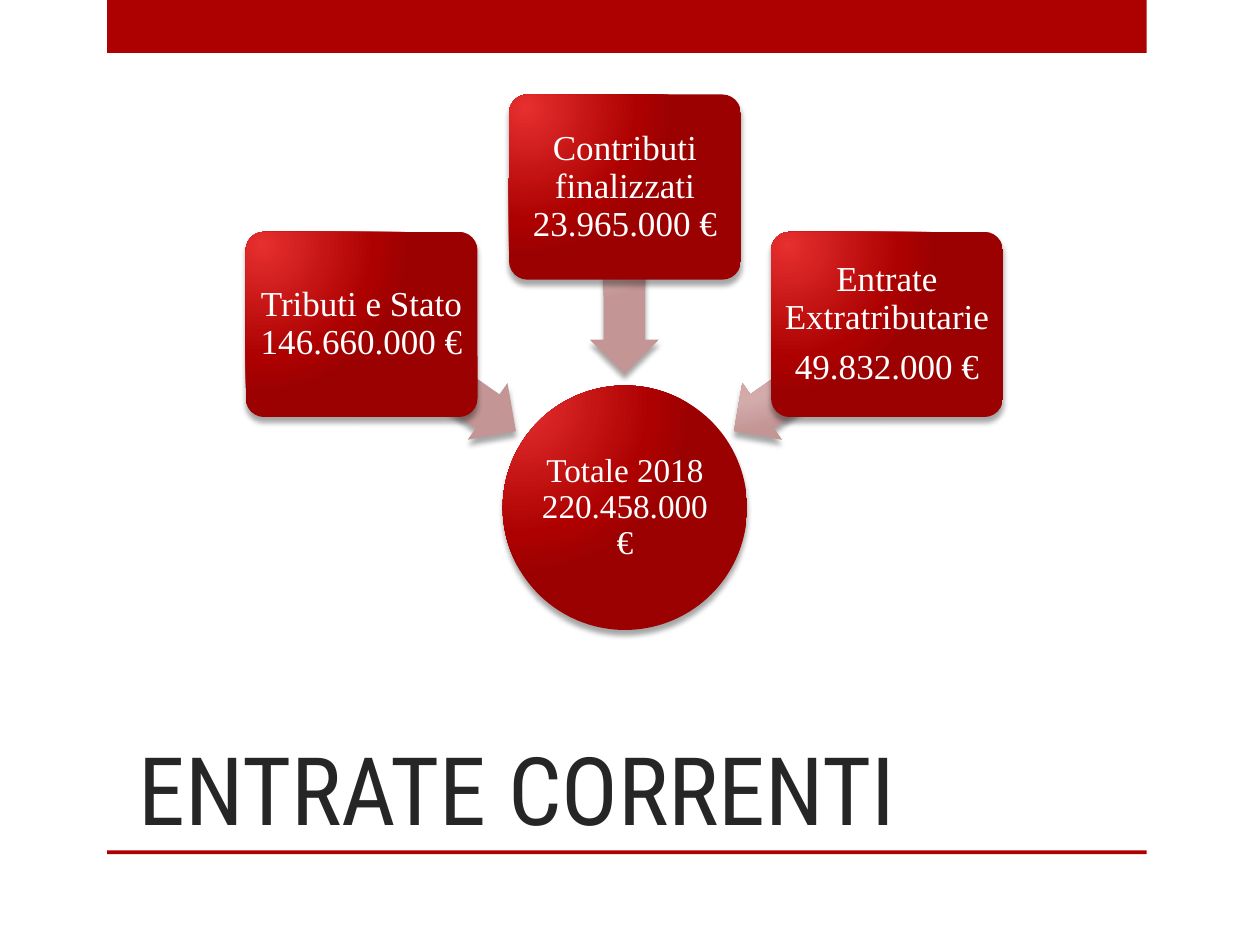
from lxml.etree import SubElement
from pptx import Presentation
from pptx.dml.color import RGBColor
from pptx.enum.shapes import MSO_SHAPE as SHAPE
from pptx.enum.text import MSO_ANCHOR as ANCHOR, PP_ALIGN as ALIGN
from pptx.oxml import parse_xml
from pptx.oxml.ns import nsdecls, qn
from pptx.util import Inches, Pt

TITLE = " ENTRATE CORRENTI"
TOTAL = ["Totale 2018 220.458.000 €"]
SOURCES = [
    (1.95, 1.84, ["Tributi e Stato 146.660.000 €"], (2.74, 2.72, 215)),
    (4.04, 0.75, ["Contributi finalizzati 23.965.000 €"], (4.21, 1.95, 270)),
    (6.12, 1.84, ["Entrate Extratributarie", "49.832.000 €"], (5.69, 2.72, 325)),
]
BARS = [(0, 0.42), (6.75, 0.03)]
RED = "AD0101"
STRONG = [(0, "E62F2F"), (76, RED), (100, "9C0101")]
PALE = [(0, "E68989"), (76, "D3ABAB"), (100, "C39595")]
BOX_FONT = {"name": "Times New Roman", "size": Pt(20)}
TOTAL_FONT = {"name": "Times New Roman", "size": Pt(19)}
TITLE_FONT = {"name": "Roboto Condensed", "size": Pt(54)}
PARAGRAPH = {"alignment": ALIGN.CENTER, "line_spacing": 0.9, "space_after": Pt(7)}


def rgb(value):
    return RGBColor.from_string(value)


def set_all(target, values):
    for name, value in values.items():
        setattr(target, name, value)


def add_shape(s, kind, *box):
    sp = s.shapes.add_shape(kind, *map(Inches, box))
    sp.shadow.inherit = False
    sp.line.fill.background()
    return sp


def add_glossy(s, kind, stops, *box):
    sp = add_shape(s, kind, *box)
    marks = "".join(
        f'<a:gs pos="{pos * 1000}"><a:srgbClr val="{color}"/></a:gs>' for pos, color in stops
    )
    props = sp.fill._xPr
    props.find(qn("a:ln")).addprevious(parse_xml(
        f'<a:gradFill {nsdecls("a")} rotWithShape="1"><a:gsLst>{marks}</a:gsLst>'
        '<a:path path="circle"><a:fillToRect l="15000" t="15000" r="100000" b="100000"/>'
        '</a:path></a:gradFill>'
    ))
    shadow = SubElement(
        props.find(qn("a:effectLst")), qn("a:outerShdw"),
        blurRad=str(Pt(3)), dist=str(Pt(3)), dir="5400000", rotWithShape="0",
    )
    color = SubElement(shadow, qn("a:srgbClr"), val="000000")
    SubElement(color, qn("a:alpha"), val="35000")
    return sp


def write(sp, lines, font, color, anchor, paragraph, inset=None):
    tf = sp.text_frame
    set_all(tf, {"word_wrap": True, "vertical_anchor": anchor})
    if inset is not None:
        sides = ("left", "top", "right", "bottom")
        set_all(tf, {f"margin_{side}": Inches(inset) for side in sides})
    for i, line in enumerate(lines):
        p = tf.paragraphs[0] if i == 0 else tf.add_paragraph()
        set_all(p, paragraph)
        r = p.add_run()
        r.text = line
        set_all(r.font, font)
        r.font.color.rgb = rgb(color)


def main():
    prs = Presentation()
    prs.slide_width, prs.slide_height = Inches(10), Inches(7.5)
    s = prs.slides.add_slide(prs.slide_layouts[6])

    for top, height in BARS:
        bar = add_shape(s, SHAPE.RECTANGLE, 0.85, top, 8.25, height)
        bar.fill.solid()
        bar.fill.fore_color.rgb = rgb(RED)

    title = s.shapes.add_textbox(*map(Inches, (0.83, 5.47, 7.42, 1.28)))
    write(title, [TITLE], TITLE_FONT, "262626", ANCHOR.BOTTOM, {})

    total = add_glossy(s, SHAPE.OVAL, STRONG, 3.99, 3.06, 1.94, 1.94)
    write(total, TOTAL, TOTAL_FONT, "FFFFFF", ANCHOR.MIDDLE, PARAGRAPH, 0.01)

    for left, top, lines, (arrow_left, arrow_top, angle) in SOURCES:
        arrow = add_glossy(s, SHAPE.LEFT_ARROW, PALE, arrow_left, arrow_top, 1.49, 0.55)
        arrow.rotation = angle
        arrow.adjustments[0] = 0.6
        box = add_glossy(s, SHAPE.ROUNDED_RECTANGLE, STRONG, left, top, 1.84, 1.47)
        box.adjustments[0] = 0.1
        write(box, lines, BOX_FONT, "FFFFFF", ANCHOR.MIDDLE, PARAGRAPH, 0.04)

    prs.save("out.pptx")


if __name__ == "__main__":
    main()
